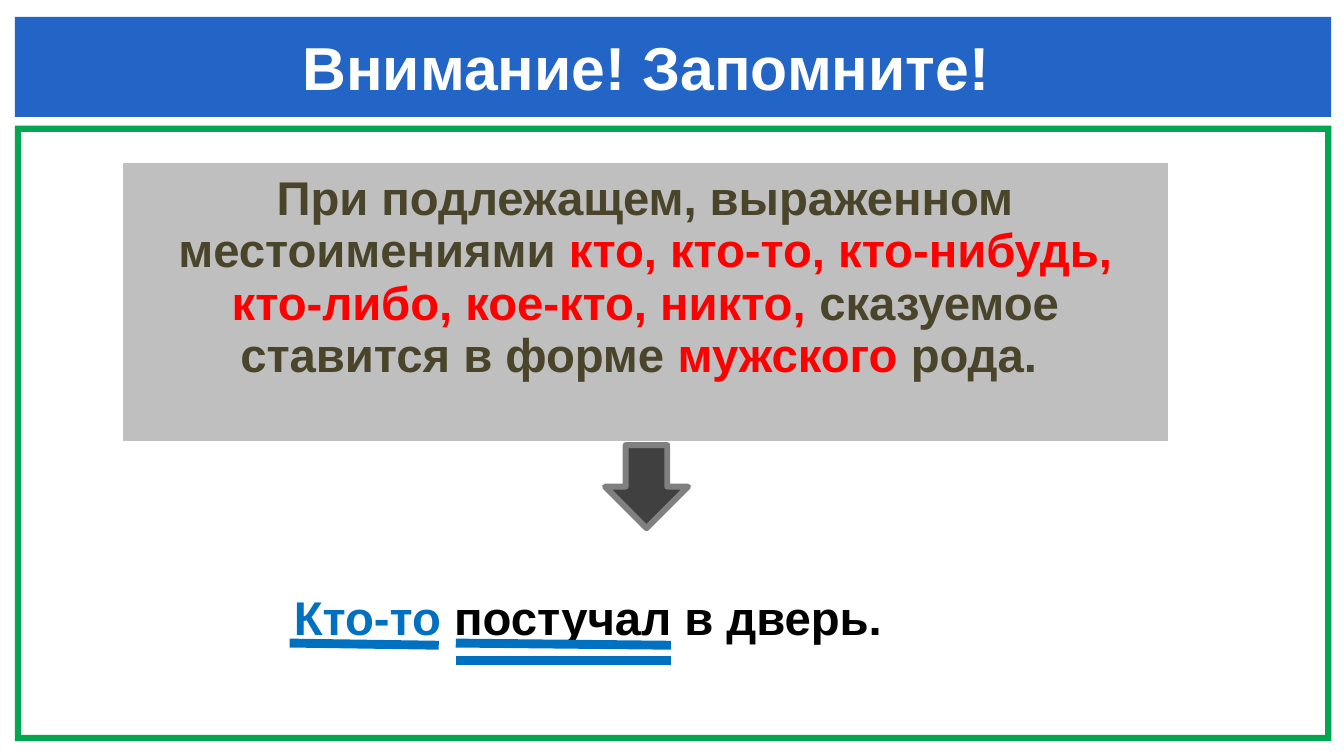
from lxml import etree
from pptx import Presentation
from pptx.dml.color import RGBColor
from pptx.enum.shapes import MSO_CONNECTOR, MSO_SHAPE
from pptx.enum.text import MSO_ANCHOR, MSO_AUTO_SIZE, PP_ALIGN
from pptx.oxml.ns import qn
from pptx.util import Inches, Pt

RECTANGLE, FRAME, DOWN_ARROW = MSO_SHAPE.RECTANGLE, MSO_SHAPE.FRAME, MSO_SHAPE.DOWN_ARROW
STRAIGHT = MSO_CONNECTOR.STRAIGHT
TOP, NO_FIT = MSO_ANCHOR.TOP, MSO_AUTO_SIZE.NONE
LEFT, CENTER = PP_ALIGN.LEFT, PP_ALIGN.CENTER

COLORS = {
    "white": "FFFFFF", "black": "000000", "green": "00A650", "band": "2365C7",
    "blue": "0070C0", "olive": "4A452A", "red": "FF0000", "panel": "BFBFBF",
    "arrow": "404040", "arrow_edge": "808080",
}


def color(name):
    return RGBColor.from_string(COLORS[name])


class LessonSlide:
    """Holds the lesson style and the page being built."""

    font = "Arial"

    def __init__(self, deck):
        self.page = deck.slides.add_slide(deck.slide_layouts[1])

    def add_spans(self, para, spans, size, align):
        para.alignment = align
        para.line_spacing = 1.0
        para.space_before = para.space_after = Pt(0)
        for text, color_name in spans:
            span = para.add_run()
            span.text = text
            span.font.name = self.font
            span.font.size = Pt(size)
            span.font.bold = True
            span.font.color.rgb = color(color_name)

    def shape(self, kind, place, fill, edge=None, edge_width=0):
        shape = self.page.shapes.add_shape(kind, *map(Inches, place))
        shape.shadow.inherit = False
        shape.fill.solid()
        shape.fill.fore_color.rgb = color(fill)
        if edge:
            shape.line.color.rgb = color(edge)
            shape.line.width = Pt(edge_width)
        else:
            shape.line.fill.background()
        return shape

    def placeholder(self, index, place, insets, spans, size):
        box = self.page.placeholders[index]
        box.left, box.top, box.width, box.height = map(Inches, place)
        frame = box.text_frame
        frame.margin_left, frame.margin_top = map(Inches, insets)
        frame.margin_right = frame.margin_bottom = 0
        frame.vertical_anchor = TOP
        frame.auto_size = NO_FIT
        frame.word_wrap = True
        para = frame.paragraphs[0]
        self.add_spans(para, spans, size, LEFT)
        # No bullet and no hanging indent
        properties = para._p.get_or_add_pPr()
        properties.set("marL", "0")
        properties.set("indent", "0")
        etree.SubElement(properties, qn("a:buNone"))
        # Bring the text in front of the frame and band
        box.element.getparent().append(box.element)

    def rule_table(self, place, spans, size):
        table = self.page.shapes.add_table(1, 1, *map(Inches, place)).table
        table.first_row = table.horz_banding = False
        cell = table.cell(0, 0)
        self.add_spans(cell.text_frame.paragraphs[0], spans, size, CENTER)
        properties = cell._tc.get_or_add_tcPr()
        for side, width in (("L", 1), ("R", 1), ("T", 1), ("B", 3)):
            border = etree.SubElement(properties, qn(f"a:ln{side}"), w=str(Pt(width)))
            fill = etree.SubElement(border, qn("a:solidFill"))
            etree.SubElement(fill, qn("a:srgbClr"), val=COLORS["white"])
        cell.fill.solid()
        cell.fill.fore_color.rgb = color("panel")

    def underline(self, start, end, color_name, width):
        line = self.page.shapes.add_connector(STRAIGHT, *map(Inches, start + end))
        line.line.color.rgb = color(color_name)
        line.line.width = Pt(width)
        etree.SubElement(line.element.spPr, qn("a:effectLst"))


def main():
    deck = Presentation()
    deck.slide_width, deck.slide_height = Inches(6.31), Inches(3.55)
    slide = LessonSlide(deck)

    # Frame and title band
    frame = slide.shape(FRAME, (0.07, 0.59, 6.18, 2.89), "green")
    frame.adjustments[0] = 0.01
    slide.shape(RECTANGLE, (0.07, 0.08, 6.18, 0.47), "band")

    # Title and example sentence
    slide.placeholder(0, (0.33, 0.11, 5.65, 0.35), (1.09, 0.03),
                      [("Внимание! Запомните!", "white")], 20.5)
    slide.placeholder(1, (1.2, 2.48, 4.92, 0.54), (0.18, 0.28),
                      [("Кто-то", "blue"), (" постучал в дверь.", "black")], 16)

    # Rule
    slide.rule_table((0.57, 0.76, 4.92, 1.33), [
        ("При подлежащем, выраженном местоимениями ", "olive"),
        ("кто, кто-то, кто-нибудь, кто-либо, кое-кто, никто,", "red"),
        (" сказуемое ставится в форме ", "olive"),
        ("мужского", "red"),
        (" рода. ", "olive"),
    ], 16)

    # Arrow from the rule to the example
    slide.shape(DOWN_ARROW, (2.84, 2.09, 0.39, 0.39), "arrow", "arrow_edge", 2)

    # Subject underlined once, predicate twice
    for start, end in (((2.06, 3.03), (1.36, 3.02)),
                       ((3.15, 3.03), (2.14, 3.02)),
                       ((3.15, 3.1), (2.14, 3.1))):
        slide.underline(start, end, "blue", 3)

    deck.save("out.pptx")


if __name__ == "__main__":
    main()
